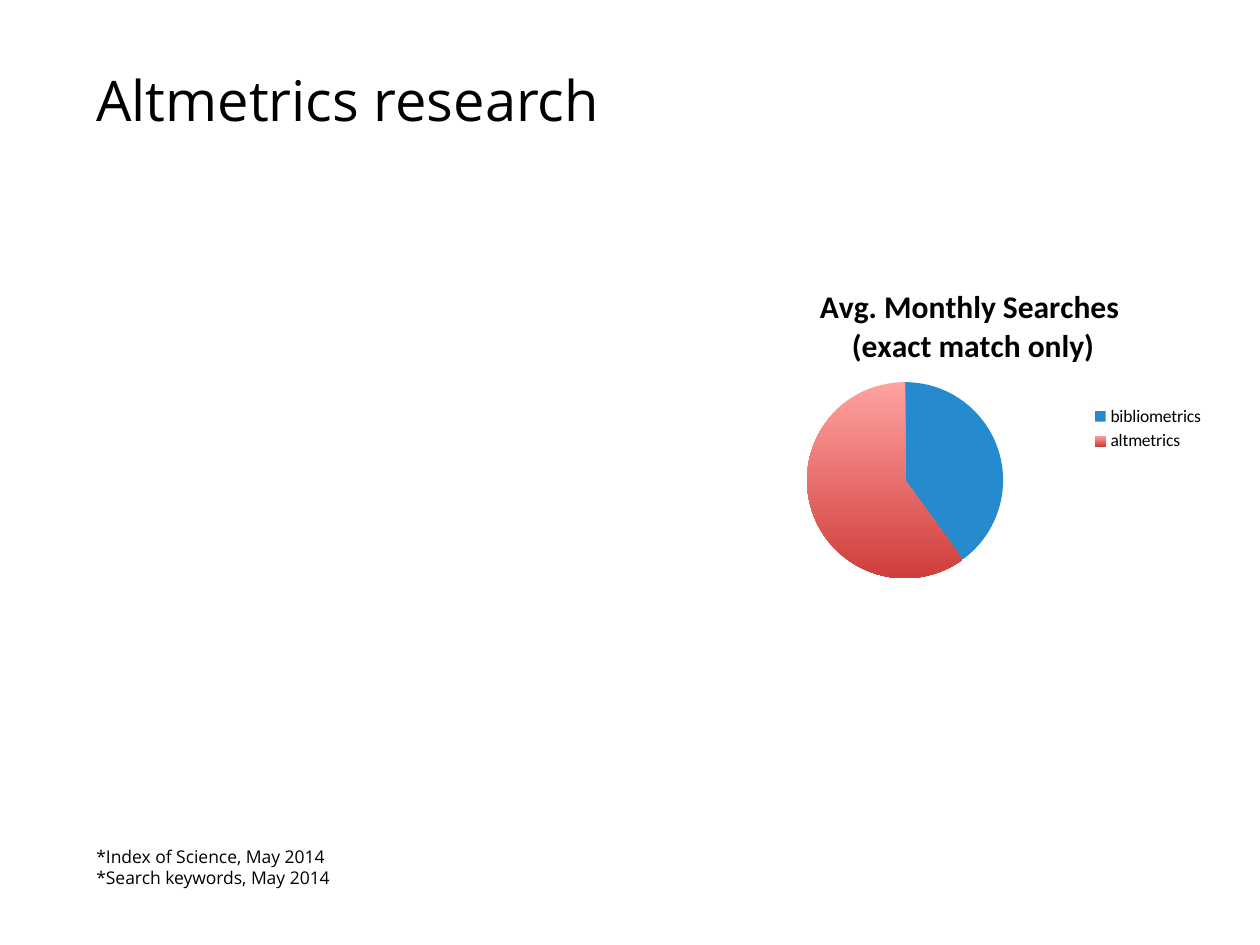
"""Build the altmetrics research slide with its pie chart of monthly searches."""
from lxml.etree import SubElement
from pptx import Presentation
from pptx.chart.data import CategoryChartData
from pptx.dml.color import RGBColor
from pptx.enum.chart import XL_CHART_TYPE as ChartType, XL_LEGEND_POSITION as LegendPosition
from pptx.oxml import parse_xml
from pptx.oxml.ns import nsdecls, qn
from pptx.util import Pt

BLACK = RGBColor(0x00, 0x00, 0x00)
BLUE = RGBColor(0x26, 0x8A, 0xCE)
LIGHT_RED = RGBColor(0xFF, 0xA2, 0xA0)
DARK_RED = RGBColor(0xCF, 0x3E, 0x3B)


def format_font(font, size, name, bold=False):
    for attribute, value in {"size": Pt(size), "name": name, "bold": bold}.items():
        setattr(font, attribute, value)
    font.color.rgb = BLACK


def set_layout(element, index, values):
    for old_layout in element.findall(qn("c:layout")):
        element.remove(old_layout)
    layout = parse_xml(f"<c:layout {nsdecls('c')}/>")
    manual = SubElement(layout, qn("c:manualLayout"))
    for tag, value in values.items():
        SubElement(manual, qn(f"c:{tag}")).set("val", str(value))
    element.insert(index, layout)


presentation = Presentation()
presentation.slide_width = Pt(720)
presentation.slide_height = Pt(540)
slide = presentation.slides.add_slide(presentation.slide_layouts[6])

texts = [
    (34, 90, 32, ["Altmetrics research"]),
    (480, 30, 10, ["*Index of Science, May 2014", "*Search keywords, May 2014"]),
]
for top, height, size, lines in texts:
    text_frame = slide.shapes.add_textbox(Pt(48), Pt(top), Pt(648), Pt(height)).text_frame
    text_frame.word_wrap = True
    text_frame.text = "\n".join(lines)
    for paragraph in text_frame.paragraphs:
        format_font(paragraph.runs[0].font, size, "Open Sans")

chart_data = CategoryChartData()
chart_data.categories = ["bibliometrics", "altmetrics"]
chart_data.add_series("Series 1", (40, 60))
chart = slide.shapes.add_chart(
    ChartType.PIE, Pt(412.5), Pt(150), Pt(283), Pt(190), chart_data
).chart
format_font(chart.font, 10, "Calibri")

chart.has_title = True
title_frame = chart.chart_title.text_frame
title_frame.text = "Avg. Monthly Searches \n(exact match only)"
for paragraph in title_frame.paragraphs:
    format_font(paragraph.runs[0].font, 18, "Calibri", bold=True)
set_layout(
    chart.chart_title._element, 1, {"xMode": "edge", "yMode": "edge", "x": 0.19, "y": 0.06}
)

chart.has_legend = True
for attribute, value in {"position": LegendPosition.RIGHT, "include_in_layout": False}.items():
    setattr(chart.legend, attribute, value)

plot = chart.plots[0]
plot.vary_by_categories = True
set_layout(
    chart._chartSpace.chart.plotArea,
    0,
    {
        "layoutTarget": "inner",
        "xMode": "edge",
        "yMode": "edge",
        "x": 0.17,
        "y": 0.36,
        "w": 0.4,
        "h": 0.59,
    },
)

points = plot.series[0].points
blue_fill = points[0].format.fill
blue_fill.solid()
blue_fill.fore_color.rgb = BLUE
red_fill = points[1].format.fill
red_fill.gradient()
red_fill.gradient_angle = 270
for stop, color in zip(red_fill.gradient_stops, (LIGHT_RED, DARK_RED)):
    stop.color.rgb = color
for index in range(2):
    points[index].format.line.fill.background()

presentation.save("out.pptx")
